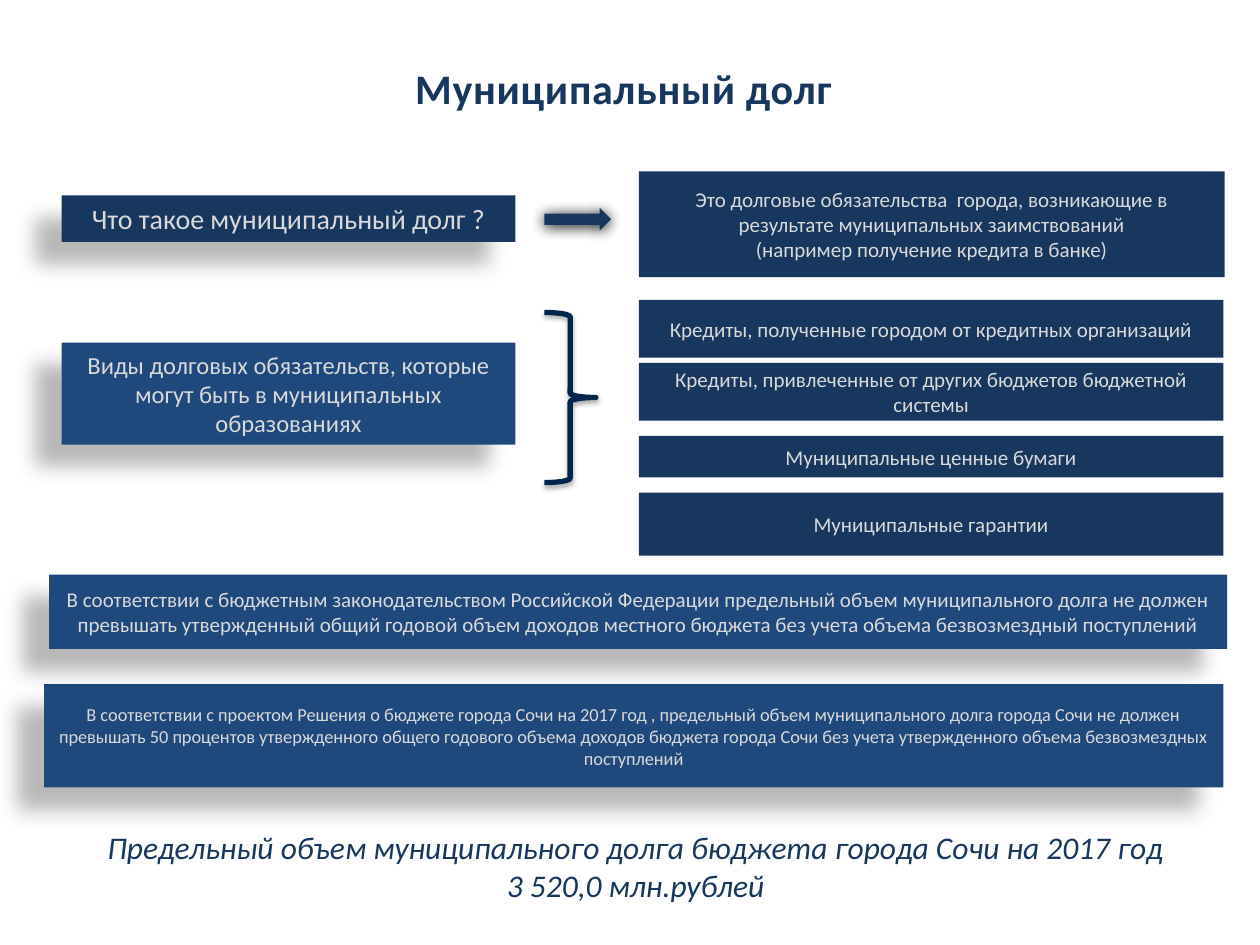
from dataclasses import dataclass

from pptx import Presentation
from pptx.dml.color import RGBColor
from pptx.enum.shapes import MSO_SHAPE as Shape
from pptx.enum.text import MSO_ANCHOR as Anchor, PP_ALIGN as Align
from pptx.oxml import parse_xml
from pptx.oxml.ns import nsdecls
from pptx.util import Inches, Pt

COLORS = {"navy": "17375E", "blue": "1F497D", "ink": "00264C", "pale": "D9D9D9", "black": "000000"}
FONT = "Calibri"
CELL = 0.1  # inches per grid column and row: the slide is 100 by 75
LABEL_WIDTH, MARKER_LEFT, PANEL_LEFT = 36, 38.3, 45.8

# opacity in percent, blur and distance in points, direction in degrees
SHADOWS = {
    "box": (28, 11.8, 19.7, 141),
    "arrow": (100, 8.5, 1, 90),
    "brace": (35, 3.1, 1.8, 90),
}


@dataclass
class Box:
    """A rectangle in grid columns and rows."""
    left: float
    top: float
    width: float
    height: float

    def inner(self, left, top, width, height):
        return Box(self.left + left, self.top + top, width, height)

    def inches(self):
        return [Inches(n * CELL) for n in (self.left, self.top, self.width, self.height)]


def color(name):
    return RGBColor.from_string(COLORS[name])


def add_shadow(shape, kind):
    opacity, blur, distance, angle = SHADOWS[kind]
    shape._element.spPr.append(parse_xml(
        f'<a:effectLst {nsdecls("a")}><a:outerShdw blurRad="{Pt(blur)}" dist="{Pt(distance)}" '
        f'dir="{angle * 60000}" algn="ctr" rotWithShape="0"><a:srgbClr val="{COLORS["black"]}">'
        f'<a:alpha val="{opacity * 1000}"/></a:srgbClr></a:outerShdw></a:effectLst>'))


def write(shape, lines, size, ink="pale", **formats):
    frame = shape.text_frame
    frame.word_wrap = True
    frame.vertical_anchor = Anchor.MIDDLE
    for index, line in enumerate(lines):
        para = frame.paragraphs[0] if index == 0 else frame.add_paragraph()
        para.alignment = Align.CENTER
        span = para.add_run()
        span.text = line
        span.font.color.rgb = color(ink)
        for name, value in {"name": FONT, "size": Pt(size), **formats}.items():
            setattr(span.font, name, value)
    return frame


def add_figure(page, preset, box, fill=None, shadow=None):
    shape = page.shapes.add_shape(preset, *box.inches())
    shape.line.fill.background()
    if fill:
        shape.fill.solid()
        shape.fill.fore_color.rgb = color(fill)
    else:
        shape.fill.background()
    if shadow:
        add_shadow(shape, shadow)
    else:
        shape.shadow.inherit = False
    return shape


def add_panel(page, box, lines, size=12, fill="navy", shadow=None):
    write(add_figure(page, Shape.RECTANGLE, box, fill, shadow), lines, size)


def add_title(page, box):
    frame = write(page.shapes.add_textbox(*box.inches()), ["Муниципальный долг"],
                  24, "navy", bold=True)
    frame.margin_right = Inches(0.26)
    frame.paragraphs[0].runs[0].font._element.set("spc", "40")


def add_definition(page, box):
    """Question, arrow and answer side by side."""
    add_panel(page, box.inner(0, 1.9, LABEL_WIDTH, 3.7),
              ["Что такое муниципальный долг ?"], 16, shadow="box")
    add_panel(page, box.inner(PANEL_LEFT, 0, box.width - PANEL_LEFT, box.height), [
        "Это долговые обязательства  города, возникающие в результате муниципальных заимствований",
        "(например получение кредита в банке)"])
    add_figure(page, Shape.RIGHT_ARROW, box.inner(MARKER_LEFT, 2.9, 5.3, 1.8), "navy", "arrow")


def add_debt_kinds(page, box):
    """Label on the left, a brace, and the stacked kinds of debt."""
    add_panel(page, box.inner(0, 3.4, LABEL_WIDTH, 8.1),
              ["Виды долговых обязательств, которые могут быть в муниципальных образованиях"],
              14, "blue", "box")
    kinds = [
        (0, 4.6, "Кредиты, полученные городом от кредитных организаций"),
        (5, 4.6, "Кредиты, привлеченные от других бюджетов бюджетной системы"),
        (10.8, 3.3, "Муниципальные ценные бумаги"),
        (15.3, 5, "Муниципальные гарантии"),
    ]
    for top, height, text in kinds:
        add_panel(page, box.inner(PANEL_LEFT, top, box.width - PANEL_LEFT, height), [text])
    brace = add_figure(page, Shape.RIGHT_BRACE, box.inner(MARKER_LEFT, 1, 4.1, 13.5),
                       shadow="brace")
    brace.line.color.rgb = color("ink")
    brace.line.width = Pt(3)


def add_limits(page, box):
    """Two wide statements, the general rule above the city's own."""
    add_panel(page, box.inner(0.4, 0, 93.5, 5.9), [
        "В соответствии с бюджетным законодательством Российской Федерации предельный объем "
        "муниципального долга не должен превышать утвержденный общий годовой объем доходов "
        "местного бюджета без учета объема безвозмездный поступлений"], 12, "blue", "box")
    add_panel(page, box.inner(0, 8.7, 93.6, 8.2), [
        "В соответствии с проектом Решения о бюджете города Сочи на 2017 год , предельный объем "
        "муниципального долга города Сочи не должен превышать 50 процентов утвержденного общего "
        "годового объема доходов бюджета города Сочи без учета утвержденного объема "
        "безвозмездных поступлений"], 10.5, "blue", "box")


def add_total(page, box):
    write(page.shapes.add_textbox(*box.inches()), [
        "Предельный объем муниципального долга бюджета города Сочи на 2017 год",
        "3 520,0 млн.рублей"], 18, "navy", italic=True)


def main():
    deck = Presentation()
    deck.slide_width, deck.slide_height = Inches(100 * CELL), Inches(75 * CELL)
    page = deck.slides.add_slide(deck.slide_layouts[6])
    add_title(page, Box(25.2, 4.5, 50.2, 5))
    add_definition(page, Box(4.9, 13.6, 92.3, 8.4))
    add_debt_kinds(page, Box(4.9, 23.8, 92.2, 20.3))
    add_limits(page, Box(3.5, 45.6, 93.9, 16.9))
    add_total(page, Box(3.5, 65.2, 93.9, 7.1))
    deck.save("out.pptx")


if __name__ == "__main__":
    main()
